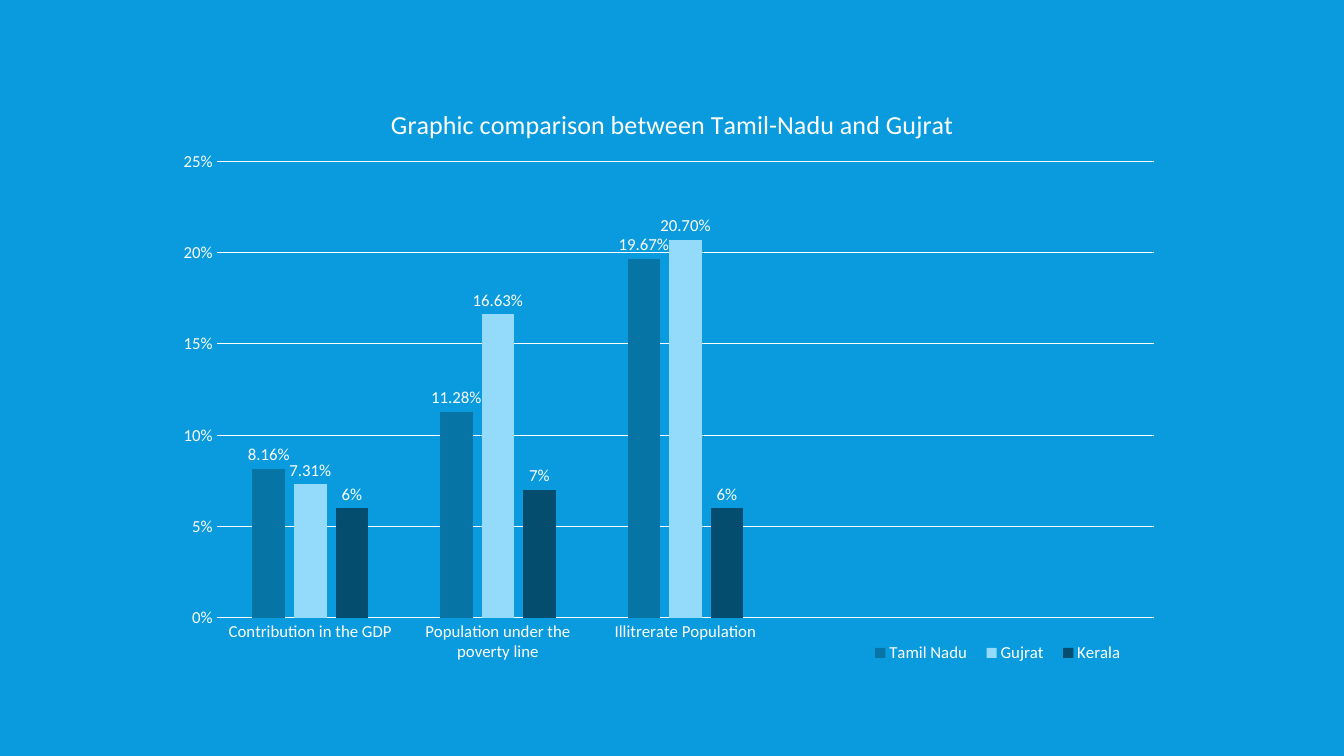
from dataclasses import dataclass

from lxml.etree import SubElement
from pptx import Presentation
from pptx.chart.data import CategoryChartData
from pptx.dml.color import RGBColor
from pptx.enum.chart import (XL_CHART_TYPE, XL_LABEL_POSITION,
                             XL_LEGEND_POSITION, XL_TICK_MARK)
from pptx.oxml.ns import qn
from pptx.util import Inches, Pt

COLORS = {
    "background": "099BDD",
    "text": "FFFFFF",
    "Tamil Nadu": "0774A6",
    "Gujrat": "93DAFB",
    "Kerala": "044D6E",
}
FONT = "Calibri"
SLIDE_WIDTH, SLIDE_HEIGHT = Inches(13.33), Inches(7.5)


@dataclass
class State:
    name: str
    shares: tuple
    number_format: str


@dataclass
class Area:
    """A box given as shares of its container."""
    x: float
    y: float
    w: float = 0
    h: float = 0


# The last two categories are empty and leave room on the right
TOPICS = ["Contribution in the GDP", "Population under the poverty line",
          "Illitrerate Population", "", ""]
STATES = [
    State("Tamil Nadu", (0.0816, 0.1128, 0.1967, None, None), "0.00%"),
    State("Gujrat", (0.0731, 0.1663, 0.207, None, None), "0.00%"),
    State("Kerala", (0.06, 0.07, 0.06, None, None), "0%"),
]
COMPARISON = Area(0.122, 0.105, 0.752, 0.835)
HEADING = Area(0.22, 0.035)
PLOT = Area(0.052, 0.13, 0.928, 0.723)
LEGEND = Area(0.69, 0.89, 0.27, 0.037)


def rgb(name: str) -> RGBColor:
    return RGBColor.from_string(COLORS[name])


def format_font(font, size: float = 12, color: str = "text") -> None:
    font.name, font.size, font.bold = FONT, Pt(size), False
    font.color.rgb = rgb(color)


def write(frame, text: str, **font_format) -> None:
    frame.text = text
    format_font(frame.paragraphs[0].runs[0].font, **font_format)


def white_line(line) -> None:
    line.color.rgb = rgb("text")
    line.width = Pt(0.75)


def place(element, area: Area, after: str | None = None, inner: bool = False) -> None:
    """Give a chart part a manual layout, following the child named in after."""
    for old in element.findall(qn("c:layout")):
        element.remove(old)
    layout = SubElement(element, qn("c:layout"))
    manual = SubElement(layout, qn("c:manualLayout"))
    settings = {"layoutTarget": "inner"} if inner else {}
    settings |= {"xMode": "edge", "yMode": "edge", "x": area.x, "y": area.y}
    if area.w:
        settings |= {"w": area.w, "h": area.h}
    for tag, value in settings.items():
        SubElement(manual, qn(f"c:{tag}")).set("val", str(value))
    if after:
        element.find(qn(after)).addnext(layout)
    else:
        element.insert(0, layout)


def style_axes(chart) -> None:
    topics, shares = chart.category_axis, chart.value_axis
    for axis in (topics, shares):
        axis.major_tick_mark = axis.minor_tick_mark = XL_TICK_MARK.NONE
        format_font(axis.tick_labels.font)
    white_line(topics.format.line)
    shares.format.line.fill.background()
    shares.has_major_gridlines = True
    white_line(shares.major_gridlines.format.line)
    shares.minimum_scale, shares.maximum_scale, shares.major_unit = 0, 0.25, 0.05
    shares.tick_labels.number_format = "0%"
    shares.tick_labels.number_format_is_linked = False


def style_bars(plot) -> None:
    plot.gap_width, plot.overlap, plot.vary_by_categories = 219, -27, False
    for state, bars in zip(STATES, plot.series):
        bars.format.fill.solid()
        bars.format.fill.fore_color.rgb = rgb(state.name)
        bars.invert_if_negative = False
        labels = bars.data_labels
        labels.show_value = True
        labels.position = XL_LABEL_POSITION.OUTSIDE_END
        labels.number_format = state.number_format
        labels.number_format_is_linked = False
        format_font(labels.font)


def add_comparison(slide) -> None:
    data = CategoryChartData()
    data.categories = TOPICS
    for state in STATES:
        data.add_series(state.name, state.shares, state.number_format)
    box = COMPARISON
    chart = slide.shapes.add_chart(
        XL_CHART_TYPE.COLUMN_CLUSTERED,
        int(box.x * SLIDE_WIDTH), int(box.y * SLIDE_HEIGHT),
        int(box.w * SLIDE_WIDTH), int(box.h * SLIDE_HEIGHT), data).chart
    format_font(chart.font, size=10)

    # Heading
    chart.has_title = True
    write(chart.chart_title.text_frame,
          "Graphic comparison between Tamil-Nadu and Gujrat", size=18.6)

    # Legend
    chart.has_legend = True
    chart.legend.position = XL_LEGEND_POSITION.BOTTOM
    chart.legend.include_in_layout = False
    format_font(chart.legend.font)

    style_axes(chart)
    style_bars(chart.plots[0])

    # Positions inside the chart
    root = chart.element
    place(root.find(f".//{qn('c:title')}"), HEADING, after="c:tx")
    place(root.find(f".//{qn('c:plotArea')}"), PLOT, inner=True)
    place(root.find(f".//{qn('c:legend')}"), LEGEND, after="c:legendPos")


def main() -> None:
    deck = Presentation()
    deck.slide_width, deck.slide_height = SLIDE_WIDTH, SLIDE_HEIGHT
    slide = deck.slides.add_slide(deck.slide_layouts[6])
    slide.background.fill.solid()
    slide.background.fill.fore_color.rgb = rgb("background")
    add_comparison(slide)
    deck.save("out.pptx")


if __name__ == "__main__":
    main()
